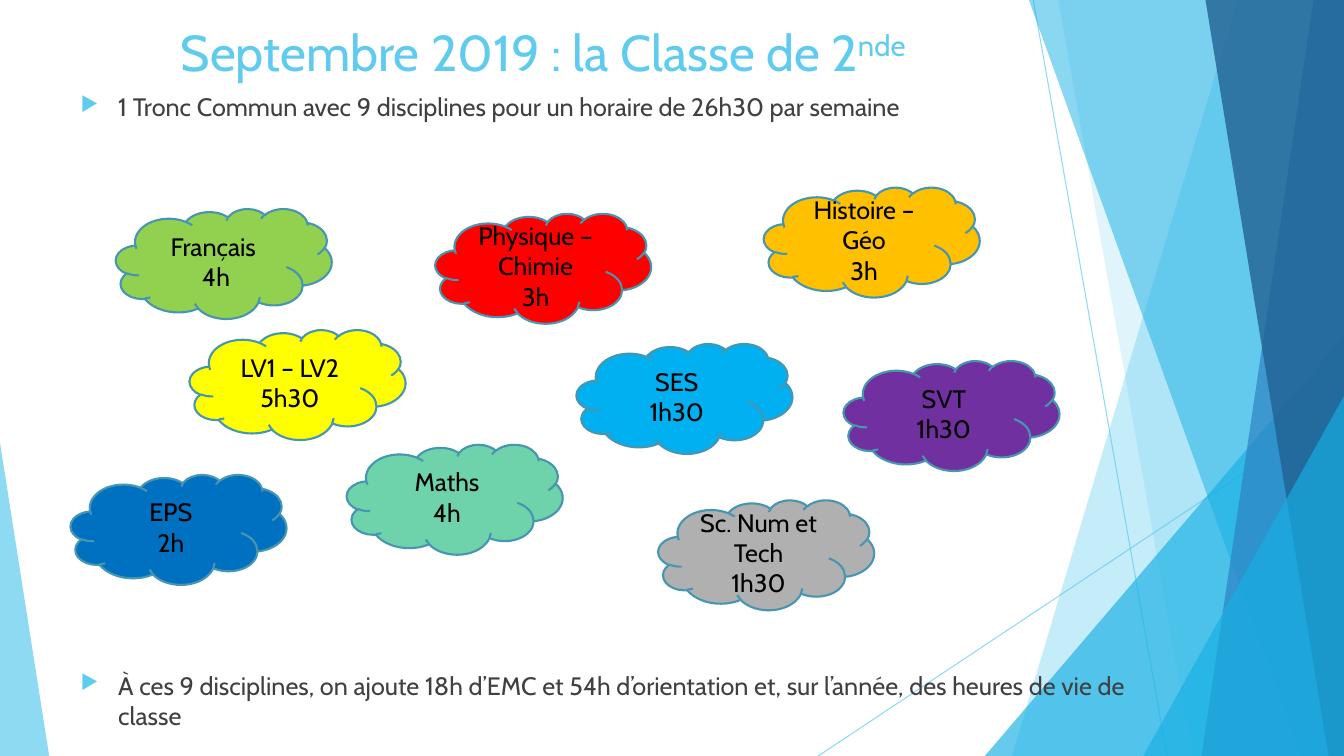
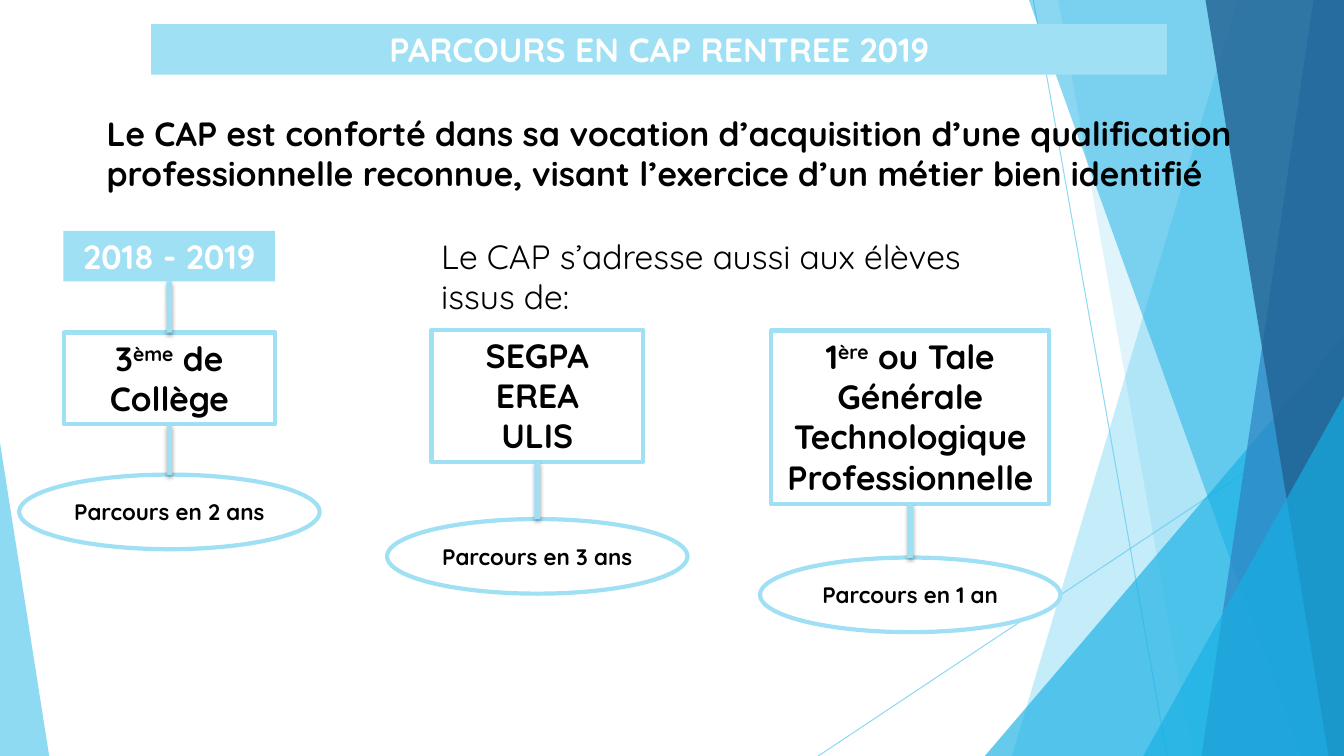
from lxml import etree
from pptx import Presentation
from pptx.dml.color import RGBColor
from pptx.enum.shapes import MSO_CONNECTOR, MSO_SHAPE
from pptx.enum.text import MSO_ANCHOR, MSO_AUTO_SIZE, PP_ALIGN
from pptx.oxml.ns import qn
from pptx.util import Cm, Pt

STRAIGHT = MSO_CONNECTOR.STRAIGHT
CLOUD, OVAL = MSO_SHAPE.CLOUD, MSO_SHAPE.OVAL
RECT, TRIANGLE = MSO_SHAPE.RECTANGLE, MSO_SHAPE.ISOSCELES_TRIANGLE
LEFT, CENTER = PP_ALIGN.LEFT, PP_ALIGN.CENTER
TOP, MIDDLE = MSO_ANCHOR.TOP, MSO_ANCHOR.MIDDLE
SITE_TOP, SITE_BOTTOM = 0, 2

WHITE = RGBColor(0xFF, 0xFF, 0xFF)
BLACK = RGBColor(0x00, 0x00, 0x00)
GREY_TEXT = RGBColor(0x40, 0x40, 0x40)
SKY = RGBColor(0x5F, 0xCB, 0xEF)
PALE_SKY = RGBColor(0x9F, 0xE0, 0xF5)
CYAN = RGBColor(0x17, 0xB0, 0xE4)
BLUE = RGBColor(0x2E, 0x83, 0xC3)
NAVY = RGBColor(0x22, 0x62, 0x92)
CLOUD_EDGE = RGBColor(0x46, 0x96, 0xB1)

CABIN, QUICKSAND = "Cabin", "Quicksand"
WIDTH, HEIGHT = 33.87, 19.05
CLOUD_SIZE = 5.44, 2.77
OVAL_SIZE = 7.57, 1.88

SUBJECTS = [  # left, top, fill, lines
    (10.97, 5.38, RGBColor(0xFF, 0x00, 0x00), ["Physique – Chimie", "3h"]),
    (21.26, 9.09, RGBColor(0x70, 0x30, 0xA0), ["SVT", "1h30"]),
    (14.53, 8.66, RGBColor(0x00, 0xB0, 0xF0), ["SES", "1h30"]),
    (16.59, 12.6, RGBColor(0xB0, 0xB0, 0xB0), ["Sc. Num et Tech", "1h30"]),
    (1.78, 11.96, RGBColor(0x00, 0x70, 0xC0), ["EPS", "2h"]),
    (4.78, 8.31, RGBColor(0xFF, 0xFF, 0x00), ["LV1 – LV2", "5h30"]),
    (19.25, 4.72, RGBColor(0xFF, 0xC0, 0x00), ["Histoire – Géo", "3h"]),
    (8.74, 11.2, RGBColor(0x6E, 0xD2, 0xAA), ["Maths", "4h"]),
    (2.92, 5.26, RGBColor(0x92, 0xD0, 0x50), ["Français ", "4h"]),
]

PATHWAYS = [  # centre, top, width, height, lines, oval top, duration
    (4.27, 8.38, 5.33, 2.31, ["3^ème^ de Collège"], 11.96,
     "Parcours en 2 ans"),
    (13.54, 8.31, 5.33, 3.33, ["SEGPA", "EREA", "ULIS"], 13.08,
     "Parcours en 3 ans"),
    (22.94, 8.33, 7.01, 4.37,
     ["1^ère^ ou Tale", "Générale", "Technologique", "Professionnelle"], 14.05,
     "Parcours en 1 an"),
]


def place(sp, left, top, width, height):
    sp.left, sp.top, sp.width, sp.height = map(Cm, (left, top, width, height))


def write(sp, lines, font, size, color, bold=False, align=CENTER, anchor=MIDDLE):
    """Fill a shape with paragraphs; text between carets is superscript."""
    tf = sp.text_frame
    tf.word_wrap = True
    tf.auto_size = MSO_AUTO_SIZE.NONE
    tf.vertical_anchor = anchor
    for i, line in enumerate(lines):
        p = tf.add_paragraph() if i else tf.paragraphs[0]
        p.alignment = align
        p.font.name, p.font.size, p.font.bold = font, Pt(size), bold
        p.font.color.rgb = color
        for j, part in enumerate(line.split("^")):
            if part:
                r = p.add_run()
                r.text = part
                if j % 2:
                    r.font._element.set("baseline", "30000")


def paint(sp, fill=None, line=None, line_width=0):
    sp.shadow.inherit = False
    if fill is None:
        sp.fill.background()
    else:
        sp.fill.solid()
        sp.fill.fore_color.rgb = fill
    if line is None:
        sp.line.fill.background()
    else:
        sp.line.color.rgb = line
        sp.line.width = Pt(line_width)


def add_shape(shapes, kind, box, fill=None, line=None, line_width=0):
    sp = shapes.add_shape(kind, *map(Cm, box))
    paint(sp, fill, line, line_width)
    return sp


def add_text(slide, box, text, font, size, color, bold=False):
    sp = slide.shapes.add_textbox(*map(Cm, box))
    write(sp, [text], font, size, color, bold, LEFT, TOP)
    return sp


def add_bullet(slide, box, text):
    sp = add_text(slide, box, text, CABIN, 18, GREY_TEXT)
    pPr = sp.text_frame.paragraphs[0]._p.get_or_add_pPr()
    pPr.set("marL", str(Cm(0.95)))
    pPr.set("indent", str(-Cm(0.95)))
    color = etree.Element(qn("a:buClr"))
    etree.SubElement(color, qn("a:srgbClr"), val=str(SKY))
    size = etree.Element(qn("a:buSzPct"), val="80000")
    char = etree.Element(qn("a:buChar"), char="▶")
    for i, element in enumerate((color, size, char)):
        pPr.insert(i, element)


def add_line(shapes, start, end, color, width):
    """Draw a straight line and return it with its empty effect list."""
    line = shapes.add_connector(STRAIGHT, *map(Cm, start + end))
    line.line.color.rgb = color
    line.line.width = Pt(width)
    effects = etree.SubElement(line.element.spPr, qn("a:effectLst"))
    return line, effects


def link(slide, upper, lower):
    """Join two shapes, bottom to top, with a thick shadowed bar."""
    line, effects = add_line(slide.shapes, (0, 0), (0, 0), PALE_SKY, 4)
    line.begin_connect(upper, SITE_BOTTOM)
    line.end_connect(lower, SITE_TOP)
    shadow = etree.SubElement(effects, qn("a:outerShdw"), blurRad=str(Pt(3)),
                              dist=str(Pt(2)), dir="5400000", rotWithShape="0")
    color = etree.SubElement(shadow, qn("a:srgbClr"), val=str(BLACK))
    etree.SubElement(color, qn("a:alpha"), val="35000")


def set_opacity(sp, percent):
    for color in sp.element.spPr.iter(qn("a:srgbClr")):
        etree.SubElement(color, qn("a:alpha"), val=str(percent * 1000))


def add_ray(shapes, start, end):
    line, _ = add_line(shapes, start, end, SKY, 0.75)
    set_opacity(line, 70)


def add_band(shapes, top_x, bottom_x, color, opacity):
    """Fill the area between a slanted edge and the slide's right side."""
    builder = shapes.build_freeform(Cm(top_x), 0)
    corners = [(WIDTH, 0), (WIDTH, HEIGHT), (bottom_x, HEIGHT)]
    builder.add_line_segments([(Cm(x), Cm(y)) for x, y in corners])
    sp = builder.convert_to_shape()
    paint(sp, color)
    set_opacity(sp, opacity)


def add_corner(shapes, left, top, width, apex, color, opacity):
    """Add a right-angled triangle that stands on the slide's bottom edge."""
    sp = add_shape(shapes, TRIANGLE, (left, top, width, HEIGHT - top), color)
    sp.adjustments[0] = apex
    set_opacity(sp, opacity)


def build_backdrop(prs, slide):
    """Draw the facets on a slide, then move them to the master."""
    group = slide.shapes.add_group_shape()
    shapes = group.shapes
    add_ray(shapes, (26.04, 0), (29.41, HEIGHT))
    add_ray(shapes, (WIDTH, 10.24), (20.62, HEIGHT))
    add_band(shapes, 31.19, 25.5, SKY, 36)
    add_band(shapes, 26.67, 30.05, SKY, 20)
    add_corner(shapes, 24.82, 8.46, 9.05, 1, CYAN, 66)
    add_band(shapes, 25.93, 32.79, CYAN, 50)
    add_band(shapes, 33.1, 30.28, BLUE, 70)
    add_band(shapes, 30.38, 33.48, NAVY, 80)
    add_corner(shapes, 28.81, 9.98, 5.06, 1, CYAN, 66)
    add_corner(shapes, 0, 11.15, 1.24, 0, SKY, 70)
    for number, props in enumerate(group.element.iter(qn("p:cNvPr")), 100):
        props.set("id", str(number))
    prs.slide_master.shapes.element.insert(2, group.element)


def build_common_core(slide):
    title = slide.shapes.title
    place(title, 1.83, 0.36, 23.88, 1.85)
    write(title, ["Septembre 2019 : la Classe de 2^nde ^"], CABIN, 36, SKY)
    add_bullet(slide, (1.78, 2.18, 26.9, 1.02),
               "1 Tronc Commun avec 9 disciplines pour un horaire de 26h30 par semaine")
    add_bullet(slide, (1.78, 16.76, 26.9, 1.8),
               "À ces 9 disciplines, on ajoute 18h d’EMC et 54h d’orientation et, "
               "sur l’année, des heures de vie de classe")
    for left, top, fill, lines in SUBJECTS:
        sp = add_shape(slide.shapes, CLOUD, (left, top, *CLOUD_SIZE),
                       fill, CLOUD_EDGE, 1.5)
        write(sp, lines, CABIN, 18, BLACK)


def add_pathway(slide, centre, top, width, height, lines, oval_top, duration):
    """Add an origin box linked to its duration and return the box."""
    box = add_shape(slide.shapes, RECT, (centre - width / 2, top, width, height),
                    None, PALE_SKY, 3)
    write(box, lines, QUICKSAND, 24, BLACK, True, anchor=TOP)
    oval = add_shape(slide.shapes, OVAL,
                     (centre - OVAL_SIZE[0] / 2, oval_top, *OVAL_SIZE),
                     WHITE, PALE_SKY, 3)
    write(oval, [duration], QUICKSAND, 16, BLACK, True)
    link(slide, box, oval)
    return box


def build_cap_pathways(slide):
    title = slide.shapes.title
    place(title, 3.81, 0.61, 25.6, 1.27)
    title.fill.solid()
    title.fill.fore_color.rgb = PALE_SKY
    write(title, ["PARCOURS EN CAP RENTREE 2019"], QUICKSAND, 24, WHITE, True)
    add_text(slide, (2.44, 2.72, 30.81, 2.31),
             "Le CAP est conforté dans sa vocation d’acquisition d’une qualification "
             "professionnelle reconnue, visant l’exercice d’un métier bien identifié",
             QUICKSAND, 24, BLACK, True)
    add_text(slide, (10.87, 5.82, 14.55, 2.31),
             "Le CAP s’adresse aussi aux élèves issus de:", QUICKSAND, 24, BLACK)
    year = add_shape(slide.shapes, RECT, (1.6, 5.82, 5.33, 1.27), PALE_SKY)
    write(year, ["2018 - 2019"], QUICKSAND, 24, WHITE, True)
    boxes = [add_pathway(slide, *pathway) for pathway in PATHWAYS]
    link(slide, year, boxes[0])


def main():
    prs = Presentation()
    prs.slide_width, prs.slide_height = Cm(WIDTH), Cm(HEIGHT)
    title_only = prs.slide_layouts[5]
    core, cap = (prs.slides.add_slide(title_only) for _ in range(2))
    build_backdrop(prs, core)
    build_common_core(core)
    build_cap_pathways(cap)
    prs.save("out.pptx")


if __name__ == "__main__":
    main()
